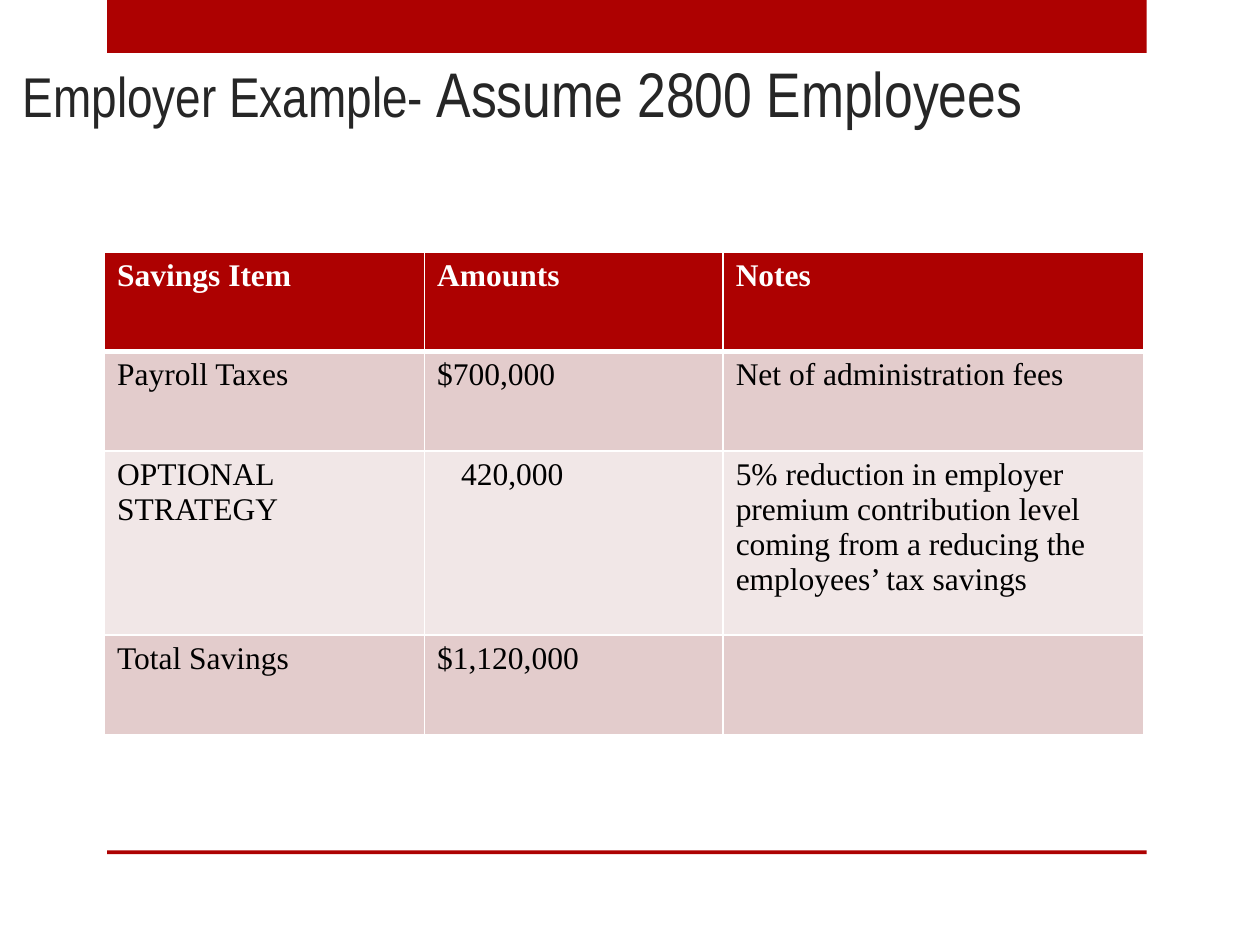
"""Build the employer savings slide: title, red bars and a savings table."""
from dataclasses import dataclass

from lxml import etree
from pptx import Presentation
from pptx import util as u
from pptx.dml.color import RGBColor
from pptx.enum import shapes, text
from pptx.oxml.ns import qn


@dataclass(frozen=True)
class Theme:
    red: str = "AD0101"
    bands: tuple = ("E3CCCC", "F1E7E7")
    white: str = "FFFFFF"
    black: str = "000000"
    ink: str = "262626"
    title_font: str = "Arial Narrow"
    table_font: str = "Times New Roman"
    title_sizes: tuple = (32, 36)
    table_size: int = 18


def px(n):
    return u.Inches(n / 100)


def add_border(cell, side, points):
    tc_pr = cell._tc.get_or_add_tcPr()
    ln = etree.SubElement(tc_pr, qn(f"a:{side}"), w=str(u.Pt(points)))
    fill = etree.SubElement(ln, qn("a:solidFill"))
    etree.SubElement(fill, qn("a:srgbClr"), val=theme.white)


theme = Theme()
prs = Presentation()
prs.slide_width, prs.slide_height = px(1000), px(750)
s = prs.slides.add_slide(prs.slide_layouts[5])

title = s.shapes.title
title.left, title.top, title.width, title.height = px(8), px(8), px(983), px(100)
tf = title.text_frame
tf.auto_size = text.MSO_AUTO_SIZE.NONE
tf.vertical_anchor = text.MSO_ANCHOR.BOTTOM
p = tf.paragraphs[0]
p.alignment = text.PP_ALIGN.LEFT
p.font.name = theme.title_font
p.font.color.rgb = RGBColor.from_string(theme.ink)
for words, size in zip(("Employer Example- ", "Assume 2800 Employees"), theme.title_sizes):
    r = p.add_run()
    r.text = words
    r.font.size = u.Pt(size)

for top, height in ((0, 42), (675, 3)):
    sp = s.shapes.add_shape(shapes.MSO_SHAPE.RECTANGLE, px(85), px(top), px(825), px(height))
    sp.shadow.inherit = False
    sp.fill.solid()
    sp.fill.fore_color.rgb = RGBColor.from_string(theme.red)
    sp.line.fill.background()
    title._element.addprevious(sp._element)

rows = (
    ("Savings Item", "Amounts", "Notes"),
    ("Payroll Taxes", "$700,000", "Net of administration fees"),
    ("OPTIONAL STRATEGY", "420,000",
     "5% reduction in employer premium contribution level coming from "
     "a reducing the employees’ tax savings"),
    ("Total Savings", "$1,120,000", ""),
)
widths = (254, 237, 334)
heights = (79, 79, 146, 79)
table = s.shapes.add_table(
    len(rows), len(widths), px(83), px(200), px(sum(widths)), px(sum(heights))
).table
for column, width in zip(table.columns, widths):
    column.width = px(width)

for i, (row, height) in enumerate(zip(rows, heights)):
    table.rows[i].height = px(height)
    header = i == 0
    for j, words in enumerate(row):
        cell = table.cell(i, j)
        for side in ("lnL", "lnR", "lnT", "lnB"):
            thick = (header and side == "lnB") or (i == 1 and side == "lnT")
            add_border(cell, side, 3 if thick else 1)
        cell.fill.solid()
        cell.fill.fore_color.rgb = RGBColor.from_string(
            theme.red if header else theme.bands[(i - 1) % 2])
        cell.text = words
        p = cell.text_frame.paragraphs[0]
        p.font.name = theme.table_font
        p.font.size = u.Pt(theme.table_size)
        p.font.bold = header
        p.font.color.rgb = RGBColor.from_string(theme.white if header else theme.black)

table.cell(2, 1).margin_left = px(29)

prs.save("out.pptx")
